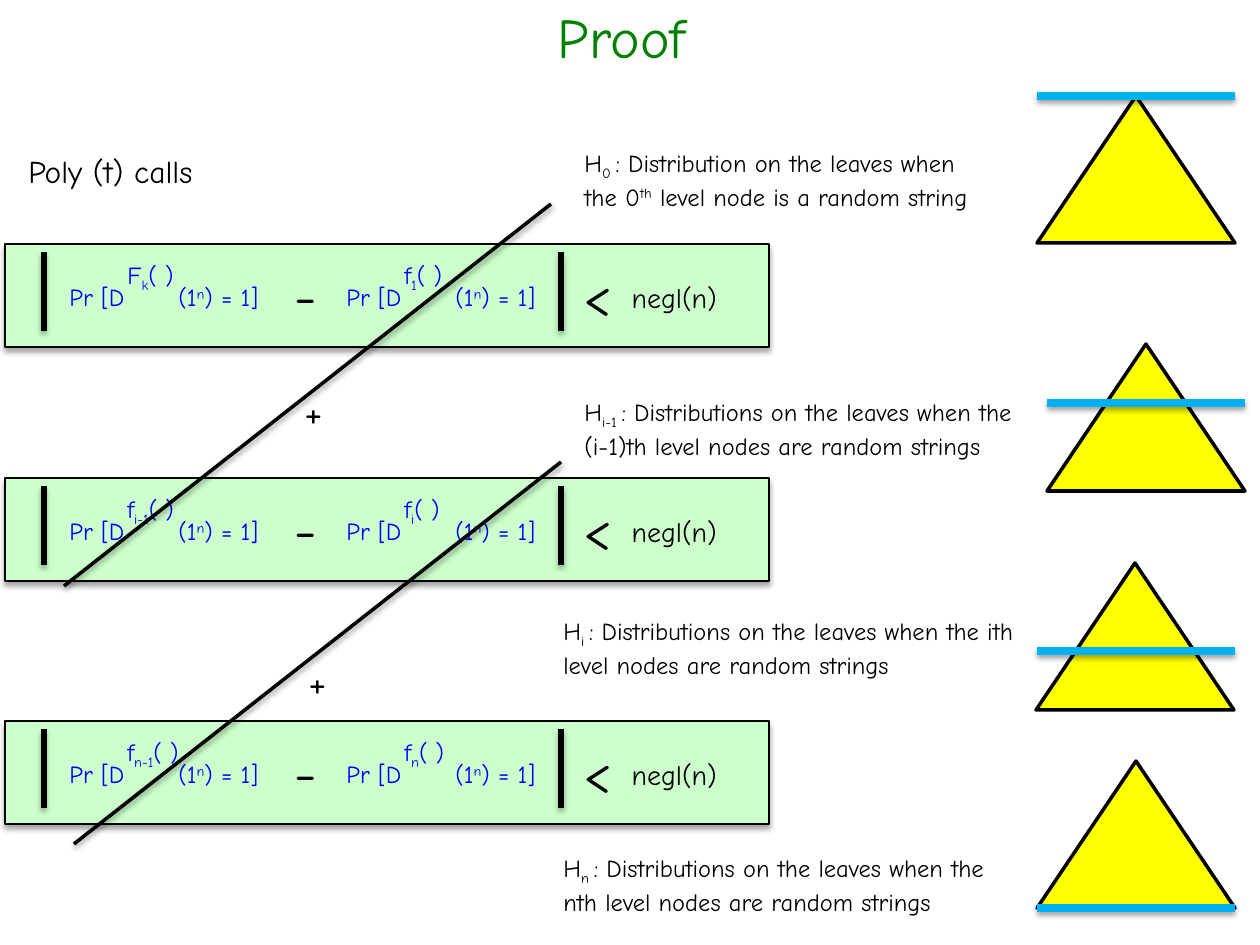
from dataclasses import dataclass

from lxml.etree import SubElement
from pptx import Presentation
from pptx.dml.color import RGBColor
from pptx.enum.shapes import MSO_CONNECTOR, MSO_SHAPE
from pptx.enum.text import MSO_ANCHOR, PP_ALIGN
from pptx.oxml.ns import qn
from pptx.util import Emu, Pt


@dataclass(frozen=True)
class Theme:
    font: str = "Comic Neue"
    ink: str = "000000"
    head: str = "008000"
    math: str = "0000FF"
    tree: str = "FFFF00"
    level: str = "00B0F0"
    panel: str = "CCFFCC"
    big: int = 32
    plus: int = 24
    lead: int = 18
    negl: int = 16
    body: int = 14


T = Theme()
SUB, SUP = -25, 30
TREE_W, TREE_H = 198, 147
ROW_W, ROW_H = 764, 103
TERM_GAP = 277

ROWS = [
    (244, ("F", "k"), ("f", "1")),
    (478, ("f", "i-1"), ("f", "i")),
    (721, ("f", "n-1"), ("f", "n")),
]
NOTES = [
    (572, 142, 436, "0 ", [(": Distribution on the leaves when the 0", 0), ("th", SUP),
                           (" level node is a random string", 0)]),
    (572, 391, 499, "i-1 ", [(": Distributions on the leaves when the "
                              "(i-1)th level nodes are random strings", 0)]),
    (551, 610, 476, "i ", [(": Distributions on the leaves when the "
                            "ith level nodes are random strings", 0)]),
    (551, 847, 475, "n ", [(": Distributions on the leaves when the "
                            "nth level nodes are random strings", 0)]),
]
TREES = [
    (1037, 96, 1037, 96),
    (1047, 344, 1047, 403),
    (1036, 563, 1037, 651),
    (1037, 761, 1037, 908),
]


def px(n):
    return Emu(round(n * 914400 / 126))


def rgb(code):
    return RGBColor.from_string(code)


def text(slide, box, runs, size, color=T.ink, align=PP_ALIGN.LEFT,
         anchor=MSO_ANCHOR.TOP, stop=None):
    frame = slide.shapes.add_textbox(*map(px, box)).text_frame
    frame.word_wrap = True
    frame.vertical_anchor = anchor
    para = frame.paragraphs[0]
    para.alignment = align
    if stop:
        tabs = SubElement(para._p.get_or_add_pPr(), qn("a:tabLst"))
        SubElement(tabs, qn("a:tab"), pos=str(px(stop)), algn="l")
    for words, base in runs:
        run = para.add_run()
        run.text = words
        run.font.name = T.font
        run.font.size = Pt(size)
        run.font.color.rgb = rgb(color)
        if base:
            run._r.get_or_add_rPr().set("baseline", str(base * 1000))


def shade(effect, alpha=35, dist=1.8):
    cast = SubElement(effect, qn("a:outerShdw"), blurRad=str(Pt(3.1)),
                      dist=str(Pt(dist)), dir="5400000", rotWithShape="0")
    tint = SubElement(cast, qn("a:srgbClr"), val=T.ink)
    SubElement(tint, qn("a:alpha"), val=str(alpha * 1000))


def shape(slide, kind, box, fill, width):
    item = slide.shapes.add_shape(kind, *map(px, box))
    item.shadow.inherit = False
    item.fill.solid()
    item.fill.fore_color.rgb = rgb(fill)
    item.line.color.rgb = rgb(T.ink)
    item.line.width = Pt(width)
    return item


def line(slide, ends, width, color=T.ink, **cast):
    item = slide.shapes.add_connector(MSO_CONNECTOR.STRAIGHT, *map(px, ends))
    item.line.color.rgb = rgb(color)
    item.line.width = Pt(width)
    shade(SubElement(item._element.spPr, qn("a:effectLst")), **cast)


def term(slide, x, top, name, sub):
    text(slide, (x, top + 32, 226, 43),
         [("Pr [D\t(1", 0), ("n", SUP), (") = 1]", 0)], T.body, T.math, stop=109)
    text(slide, (x + 58, top + 10, 87, 42),
         [(name, 0), (sub, SUB), ("( )", 0)], T.body, T.math)


def row(slide, top, left, right):
    panel = shape(slide, MSO_SHAPE.RECTANGLE, (5, top, ROW_W, ROW_H), T.panel, 0.75)
    shade(panel._element.spPr.find(qn("a:effectLst")))
    text(slide, (282, top + 9, 34, 81), [("-", 0)], T.big)
    for x in (44, 561):
        line(slide, (x, top + 8, x, top + 87), 3)
    text(slide, (571, top + 10, 78, 81), [("<", 0)], T.big)
    text(slide, (610, top + 30, 159, 47), [(" negl(n)", 0)], T.negl)
    for i, name in enumerate((left, right)):
        term(slide, 57 + i * TERM_GAP, top, *name)


def tree(slide, x, y, start, level):
    shape(slide, MSO_SHAPE.ISOSCELES_TRIANGLE, (x, y, TREE_W, TREE_H), T.tree, 2)
    line(slide, (start, level, start + TREE_W, level), 5, T.level)


def main():
    deck = Presentation()
    deck.slide_width, deck.slide_height = px(1260), px(945)
    slide = deck.slides.add_slide(deck.slide_layouts[6])
    text(slide, (64, -14, 1134, 100), [("Proof ", 0)], T.big, T.head,
         PP_ALIGN.CENTER, MSO_ANCHOR.MIDDLE)
    text(slide, (16, 146, 200, 50), [("Poly (t) calls", 0)], T.lead)
    for x, y, wide, sub, rest in NOTES:
        text(slide, (x, y, wide, 72), [("H", 0), (sub, SUB), *rest], T.body)
    for spot in TREES:
        tree(slide, *spot)
    for spot in ROWS:
        row(slide, *spot)
    for x, y in ((292, 379), (296, 649)):
        text(slide, (x, y, 69, 63), [("+", 0)], T.plus)
    for x, y in ((551, 204), (561, 462)):
        line(slide, (x, y, x - 487, y + 382), 2, alpha=38, dist=1.6)
    deck.save("out.pptx")


if __name__ == "__main__":
    main()
